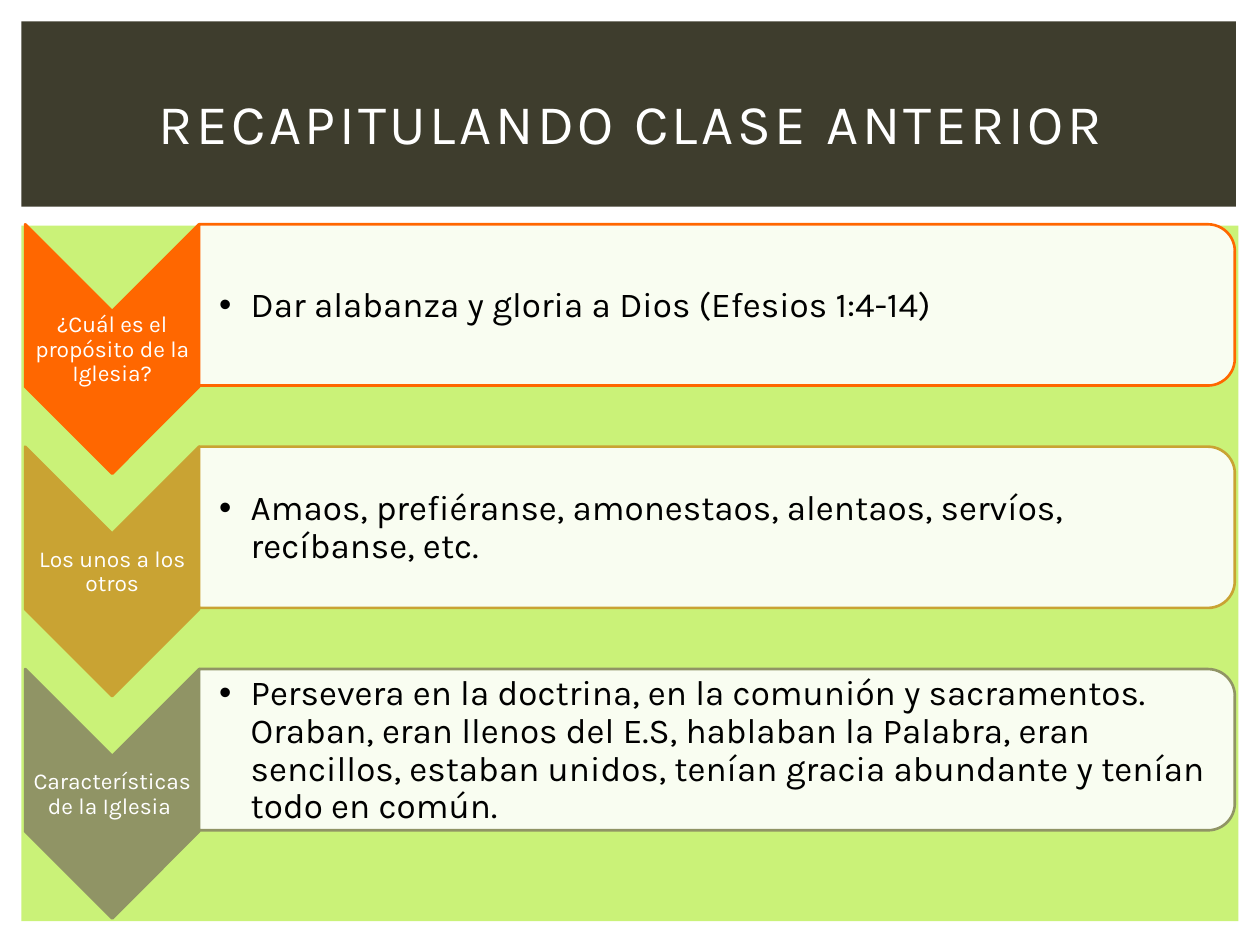
from dataclasses import dataclass

from lxml import etree
from pptx import Presentation
from pptx.dml.color import RGBColor
from pptx.enum.shapes import MSO_SHAPE
from pptx.enum.text import MSO_ANCHOR, MSO_AUTO_SIZE, PP_ALIGN
from pptx.oxml.ns import qn
from pptx.shapes.autoshape import Shape
from pptx.slide import Slide
from pptx.text.text import TextFrame
from pptx.util import Inches, Pt

RECTANGLE = MSO_SHAPE.RECTANGLE
CHEVRON = MSO_SHAPE.CHEVRON
ROUNDED_BAR = MSO_SHAPE.ROUND_2_SAME_RECTANGLE
MIDDLE = MSO_ANCHOR.MIDDLE
NO_AUTOFIT = MSO_AUTO_SIZE.NONE
CENTER = PP_ALIGN.CENTER
LEFT = PP_ALIGN.LEFT

WHITE = RGBColor(0xFF, 0xFF, 0xFF)
BLACK = RGBColor(0x00, 0x00, 0x00)
LIME = RGBColor(0xCA, 0xF2, 0x78)
DARK_OLIVE = RGBColor(0x3E, 0x3D, 0x2D)
ORANGE = RGBColor(0xFF, 0x67, 0x00)
GOLD = RGBColor(0xC9, 0xA3, 0x33)
SAGE = RGBColor(0x90, 0x94, 0x65)

FONT = "Karla"
SLIDE_WIDTH = Inches(10)
SLIDE_HEIGHT = Inches(7.5)
COLUMN = SLIDE_WIDTH / 100
ROW = SLIDE_HEIGHT / 75
TOPIC_PITCH = 17.65


@dataclass(frozen=True)
class Box:
    left: float
    top: float
    width: float
    height: float

    def place(self) -> tuple[int, int, int, int]:
        return (round(self.left * COLUMN), round(self.top * ROW),
                round(self.width * COLUMN), round(self.height * ROW))

    def down(self, rows: float) -> "Box":
        return Box(self.left, self.top + rows, self.width, self.height)


@dataclass(frozen=True)
class Topic:
    label: str
    answer: str
    color: RGBColor


BODY_PANEL = Box(1.7, 17.9, 96.6, 55.2)
TITLE_PANEL = Box(1.7, 1.7, 96.4, 14.7)
TITLE_BOX = Box(4.2, 3.9, 91.7, 11.5)
CHEVRON_BOX = Box(-1, 20.8, 19.8, 13.8)
LABEL_BOX = Box(2, 24.8, 13.8, 5.9)
BAR_BOX = Box(50.5, -16.9, 12.8, 82.2)
ANSWER_BOX = Box(15.8, 18.5, 81.6, 11.6)

TOPICS = [
    Topic("¿Cuál es el propósito de la Iglesia?",
          "Dar alabanza y gloria a Dios (Efesios 1:4-14)", ORANGE),
    Topic("Los unos a los otros",
          "Amaos, prefiéranse, amonestaos, alentaos, servíos, recíbanse, etc.", GOLD),
    Topic("Características de la Iglesia ",
          "Persevera en la doctrina, en la comunión y sacramentos. Oraban, eran "
          "llenos del E.S, hablaban la Palabra, eran sencillos, estaban unidos, "
          "tenían gracia abundante y tenían todo en común.", SAGE),
]


def add_filled(slide: Slide, kind: int, box: Box, color: RGBColor) -> Shape:
    shape = slide.shapes.add_shape(kind, *box.place())
    shape.shadow.inherit = False
    shape.fill.solid()
    shape.fill.fore_color.rgb = color
    shape.line.fill.background()
    return shape


def add_turned(slide: Slide, kind: int, box: Box, fill: RGBColor, line: RGBColor) -> Shape:
    shape = add_filled(slide, kind, box, fill)
    shape.rotation = 90
    shape.line.color.rgb = line
    shape.line.width = Pt(1.5)
    return shape


def set_opacity(shape: Shape, percent: int) -> None:
    color = shape.fill._xPr.find(qn("a:solidFill"))[0]
    etree.SubElement(color, qn("a:alpha")).set("val", str(percent * 1000))


def write(frame: TextFrame, text: str, size: int, color: RGBColor, alignment: int) -> None:
    frame.word_wrap = True
    frame.auto_size = NO_AUTOFIT
    frame.vertical_anchor = MIDDLE
    paragraph = frame.paragraphs[0]
    paragraph.text = text
    paragraph.alignment = alignment
    paragraph.font.name = FONT
    paragraph.font.size = Pt(size)
    paragraph.font.color.rgb = color


def add_text(slide: Slide, box: Box, text: str, size: int, color: RGBColor,
             alignment: int, left_margin: float = 0.01) -> TextFrame:
    frame = slide.shapes.add_textbox(*box.place()).text_frame
    write(frame, text, size, color, alignment)
    frame.margin_left = Inches(left_margin)
    frame.margin_top = frame.margin_right = frame.margin_bottom = Inches(0.01)
    frame.paragraphs[0].line_spacing = 0.9
    return frame


def add_bullet(frame: TextFrame) -> None:
    properties = frame.paragraphs[0]._p.get_or_add_pPr()
    properties.set("marL", str(Inches(0.25)))
    properties.set("indent", str(-Inches(0.25)))
    etree.SubElement(properties, qn("a:buFont")).set("typeface", "Arial")
    etree.SubElement(properties, qn("a:buChar")).set("char", "•")
    default_run = properties.find(qn("a:defRPr"))
    if default_run is not None:
        properties.append(default_run)


def add_title(slide: Slide, text: str) -> None:
    title = slide.shapes.title
    for box, color in ((BODY_PANEL, LIME), (TITLE_PANEL, DARK_OLIVE)):
        title.element.addprevious(add_filled(slide, RECTANGLE, box, color).element)
    title.left, title.top, title.width, title.height = TITLE_BOX.place()
    write(title.text_frame, text, 32, WHITE, CENTER)
    run = title.text_frame.paragraphs[0].runs[0]
    run.font._element.set("spc", "200")


def add_topic(slide: Slide, topic: Topic, rows: float) -> None:
    add_turned(slide, CHEVRON, CHEVRON_BOX.down(rows), topic.color, topic.color)
    add_text(slide, LABEL_BOX.down(rows), topic.label, 13, WHITE, CENTER)
    bar = add_turned(slide, ROUNDED_BAR, BAR_BOX.down(rows), WHITE, topic.color)
    set_opacity(bar, 90)
    answer = add_text(slide, ANSWER_BOX.down(rows), topic.answer, 20, BLACK, LEFT, 0.16)
    add_bullet(answer)


def main() -> None:
    presentation = Presentation()
    presentation.slide_width = SLIDE_WIDTH
    presentation.slide_height = SLIDE_HEIGHT
    slide = presentation.slides.add_slide(presentation.slide_layouts[5])
    add_title(slide, "RECAPITULANDO CLASE ANTERIOR")
    for index, topic in enumerate(TOPICS):
        add_topic(slide, topic, index * TOPIC_PITCH)
    presentation.save("out.pptx")


if __name__ == "__main__":
    main()
